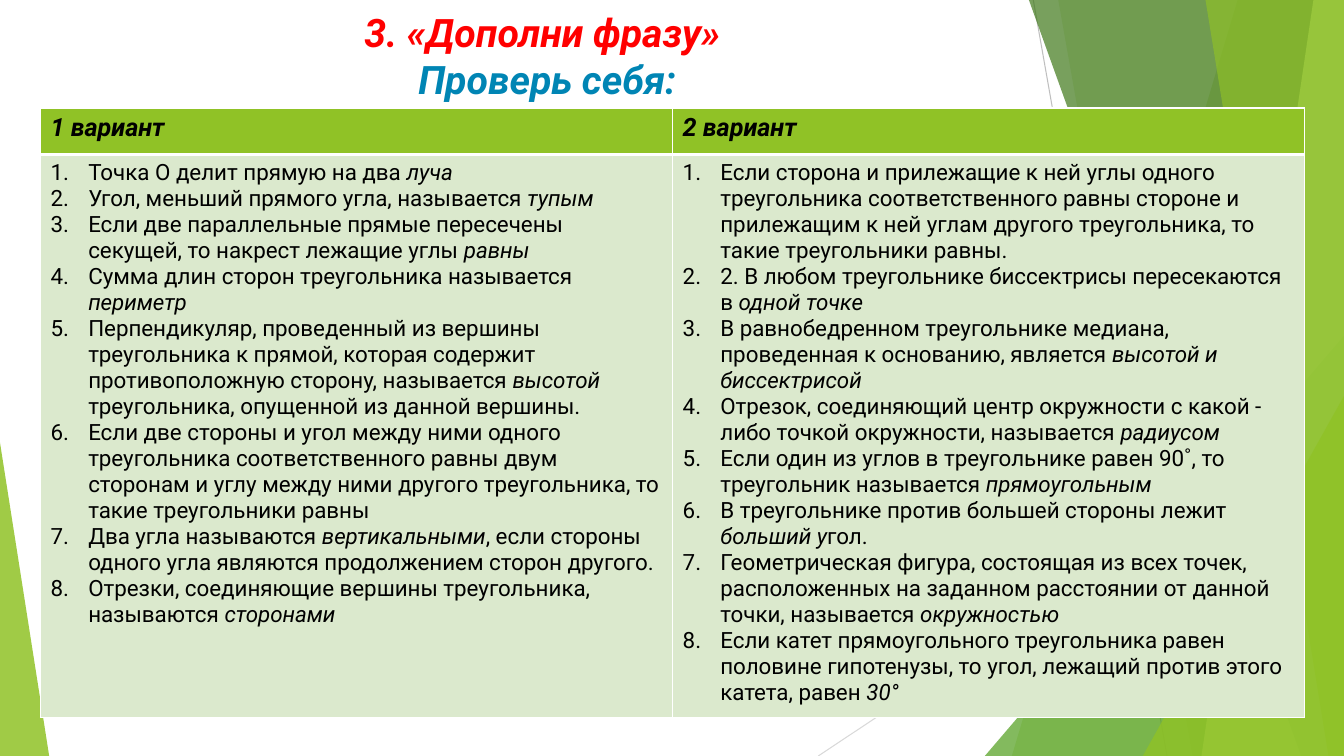
from dataclasses import dataclass

from lxml import etree
from pptx import Presentation
from pptx.dml.color import RGBColor
from pptx.enum.shapes import MSO_CONNECTOR, MSO_SHAPE
from pptx.enum.text import MSO_ANCHOR, MSO_AUTO_SIZE, PP_ALIGN
from pptx.oxml.ns import qn
from pptx.util import Cm, Pt

STRAIGHT = MSO_CONNECTOR.STRAIGHT
TRIANGLE = MSO_SHAPE.ISOSCELES_TRIANGLE
TOP = MSO_ANCHOR.TOP
NO_AUTOFIT = MSO_AUTO_SIZE.NONE
CENTER = PP_ALIGN.CENTER

PAGE_WIDTH, PAGE_HEIGHT = 33.87, 19.05
TITLE_ONLY_LAYOUT = 5


@dataclass(frozen=True)
class Theme:
    font: str = "Roboto"
    title_size: float = 28
    header_size: float = 18
    body_size: float = 16
    red: str = "FF0000"
    blue: str = "0085B4"
    text: str = "000000"
    border: str = "FFFFFF"
    green: str = "90C226"
    cell: str = "DBE9CD"
    leaf: str = "54A021"
    forest: str = "3F7819"
    lime: str = "C0E474"
    line_dark: str = "BFBFBF"
    line_light: str = "D9D9D9"


THEME = Theme()

# Asterisks enclose the words set in italics
VARIANTS = {
    "1 вариант": [
        "Точка О делит прямую на два *луча*",
        "Угол, меньший прямого угла, называется *тупым*",
        "Если две параллельные прямые пересечены секущей, то накрест лежащие углы *равны*",
        "Сумма длин сторон треугольника называется *периметр*",
        "Перпендикуляр, проведенный из вершины треугольника к прямой, которая содержит "
        "противоположную сторону, называется *высотой *треугольника, опущенной из данной вершины.",
        "Если две стороны и угол между ними одного треугольника соответственного равны двум "
        "сторонам и углу между ними другого треугольника, то такие треугольники равны",
        "Два угла называются *вертикальными*, если стороны одного угла являются "
        "продолжением сторон другого.",
        "Отрезки, соединяющие вершины треугольника, называются *сторонами*",
    ],
    "2 вариант": [
        "Если сторона и прилежащие к ней углы одного треугольника соответственного равны стороне "
        "и прилежащим к ней углам другого треугольника, то такие треугольники равны.",
        "2. В любом треугольнике биссектрисы пересекаются в* одной точке*",
        "В равнобедренном треугольнике медиана, проведенная к основанию, является "
        "*высотой и биссектрисой*",
        "Отрезок, соединяющий центр окружности с какой - либо точкой окружности, "
        "называется *радиусом*",
        "Если один из углов в треугольнике равен 90˚, то треугольник называется *прямоугольным*",
        "В треугольнике против большей стороны лежит *больший у*гол.",
        "Геометрическая фигура, состоящая из всех точек, расположенных на заданном расстоянии "
        "от данной точки, называется *окружностью*",
        "Если катет прямоугольного треугольника равен половине гипотенузы, то угол, лежащий "
        "против этого катета, равен *30°*",
    ],
}


def add_span(para, text, size=THEME.body_size, colour=THEME.text, bold=False, italic=False):
    span = para.add_run()
    span.text = text
    font = span.font
    font.name, font.size, font.bold, font.italic = THEME.font, Pt(size), bold, italic
    font.color.rgb = RGBColor.from_string(colour)


def paint(shape, colour, opacity):
    """Fill a shape with a translucent colour, without line or shadow."""
    shape.shadow.inherit = False
    shape.line.fill.background()
    shape.fill.solid()
    shape.fill.fore_color.rgb = RGBColor.from_string(colour)
    colour_node = shape.fill._xPr.find(".//" + qn("a:srgbClr"))
    etree.SubElement(colour_node, qn("a:alpha"), val=str(opacity * 1000))


def add_thin_line(page, start, end, colour):
    line = page.shapes.add_connector(STRAIGHT, *map(Cm, start + end))
    line.line.width = Pt(0.75)
    line.line.color.rgb = RGBColor.from_string(colour)
    etree.SubElement(line._element.spPr, qn("a:effectLst"))


def add_band(page, top_x, bottom_x, colour, opacity):
    """Full-height band from a slanted left edge to the right page edge."""
    right, bottom = Cm(PAGE_WIDTH), Cm(PAGE_HEIGHT)
    outline = page.shapes.build_freeform(Cm(top_x), 0)
    outline.add_line_segments([(right, 0), (right, bottom), (Cm(bottom_x), bottom)])
    paint(outline.convert_to_shape(), colour, opacity)


def add_corner(page, left, top, right, apex, colour, opacity):
    """Right triangle standing on the bottom page edge."""
    corner = page.shapes.add_shape(
        TRIANGLE, Cm(left), Cm(top), Cm(right - left), Cm(PAGE_HEIGHT - top))
    corner.adjustments[0] = apex
    paint(corner, colour, opacity)


def add_facets(page):
    add_thin_line(page, (26.04, 0), (29.41, PAGE_HEIGHT), THEME.line_dark)
    add_thin_line(page, (PAGE_WIDTH, 10.24), (20.62, PAGE_HEIGHT), THEME.line_light)
    facets = [
        (add_band, 31.19, 25.5, THEME.green, 30),
        (add_band, 26.67, 30.05, THEME.green, 20),
        (add_corner, 24.82, 8.46, PAGE_WIDTH, 1, THEME.leaf, 72),
        (add_band, 25.93, 32.79, THEME.forest, 70),
        (add_band, 33.1, 30.28, THEME.lime, 70),
        (add_band, 30.38, 33.48, THEME.green, 65),
        (add_corner, 28.8, 9.98, PAGE_WIDTH, 1, THEME.green, 80),
        (add_corner, 0, 11.15, 1.24, 0, THEME.green, 85),
    ]
    for add_facet, *details in facets:
        add_facet(page, *details)


def fill_title(page, left, top, width, height):
    title = page.shapes.title
    title.left, title.top, title.width, title.height = map(Cm, (left, top, width, height))
    frame = title.text_frame
    frame.auto_size, frame.vertical_anchor = NO_AUTOFIT, TOP
    frame.word_wrap = True
    frame.margin_top = Cm(0.2)
    para = frame.paragraphs[0]
    para.alignment = CENTER
    style = {"size": THEME.title_size, "bold": True, "italic": True}
    add_span(para, "3. «Дополни фразу» ", colour=THEME.red, **style)
    para.add_line_break()
    add_span(para, "Проверь себя:", colour=THEME.blue, **style)


def style_cell(cell, colour, top_width, bottom_width):
    properties = cell._tc.get_or_add_tcPr()
    widths = {"a:lnL": 1, "a:lnR": 1, "a:lnT": top_width, "a:lnB": bottom_width}
    for side, width in widths.items():
        edge = etree.SubElement(properties, qn(side), w=str(Pt(width)))
        fill = etree.SubElement(edge, qn("a:solidFill"))
        etree.SubElement(fill, qn("a:srgbClr"), val=THEME.border)
    cell.fill.solid()
    cell.fill.fore_color.rgb = RGBColor.from_string(colour)


def fill_numbered_list(frame, items):
    indent = Cm(0.95)
    for index, item in enumerate(items):
        para = frame.add_paragraph() if index else frame.paragraphs[0]
        properties = para._p.get_or_add_pPr()
        properties.set("marL", str(indent))
        properties.set("indent", str(-indent))
        etree.SubElement(properties, qn("a:buFont"), typeface=THEME.font)
        etree.SubElement(properties, qn("a:buAutoNum"), type="arabicPeriod")
        for part, text in enumerate(item.split("*")):
            if text:
                add_span(para, text, italic=part % 2 == 1)


def add_variants_table(page, left, top, width, height, header_height=1.17):
    table = page.shapes.add_table(
        2, len(VARIANTS), *map(Cm, (left, top, width, height))).table
    table.horz_banding = False
    table.rows[0].height = Cm(header_height)
    table.rows[1].height = Cm(height - header_height)
    for column, (heading, items) in enumerate(VARIANTS.items()):
        header, body = table.cell(0, column), table.cell(1, column)
        style_cell(header, THEME.green, top_width=1, bottom_width=3)
        style_cell(body, THEME.cell, top_width=3, bottom_width=1)
        add_span(header.text_frame.paragraphs[0], heading,
                 size=THEME.header_size, bold=True, italic=True)
        fill_numbered_list(body.text_frame, items)


def main():
    deck = Presentation()
    deck.slide_width, deck.slide_height = Cm(PAGE_WIDTH), Cm(PAGE_HEIGHT)
    page = deck.slides.add_slide(deck.slide_layouts[TITLE_ONLY_LAYOUT])
    add_facets(page)
    fill_title(page, left=1.85, top=0, width=23.88, height=2.72)
    add_variants_table(page, left=1.02, top=2.72, width=31.86, height=15.37)
    deck.save("out.pptx")


if __name__ == "__main__":
    main()
